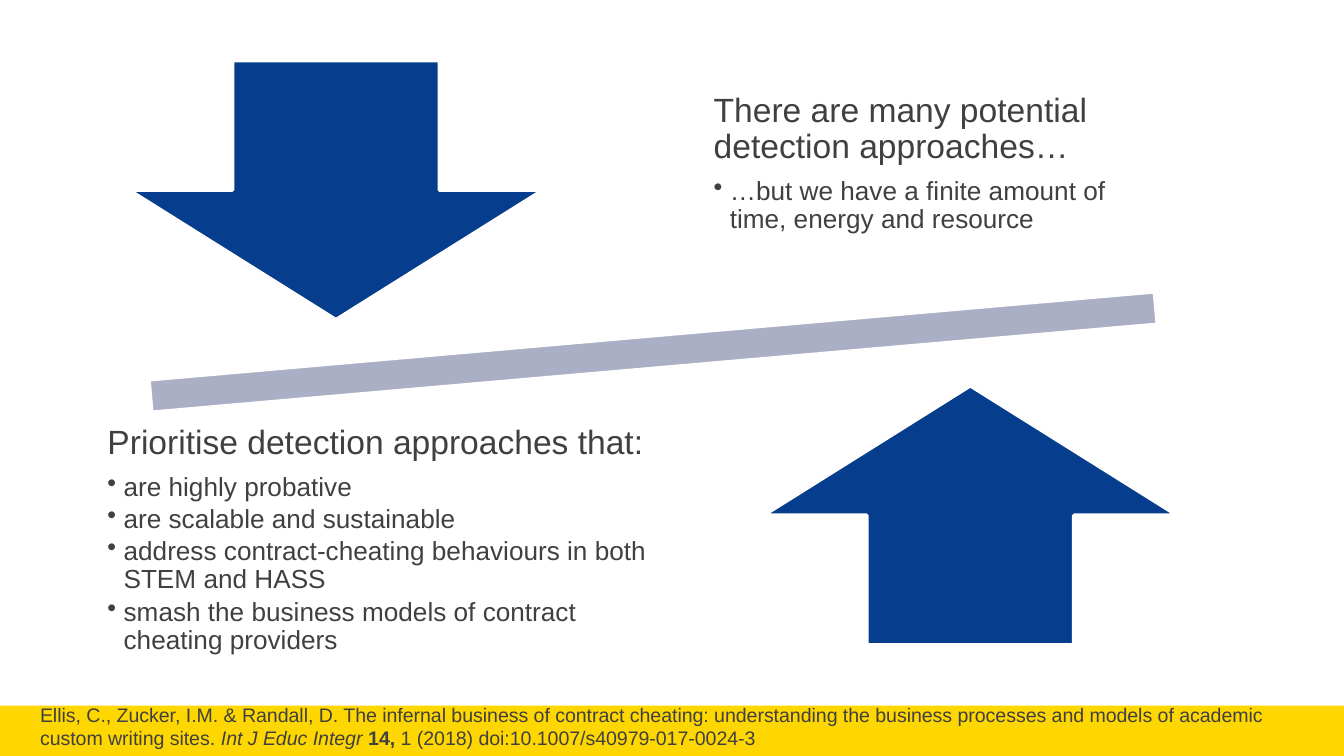
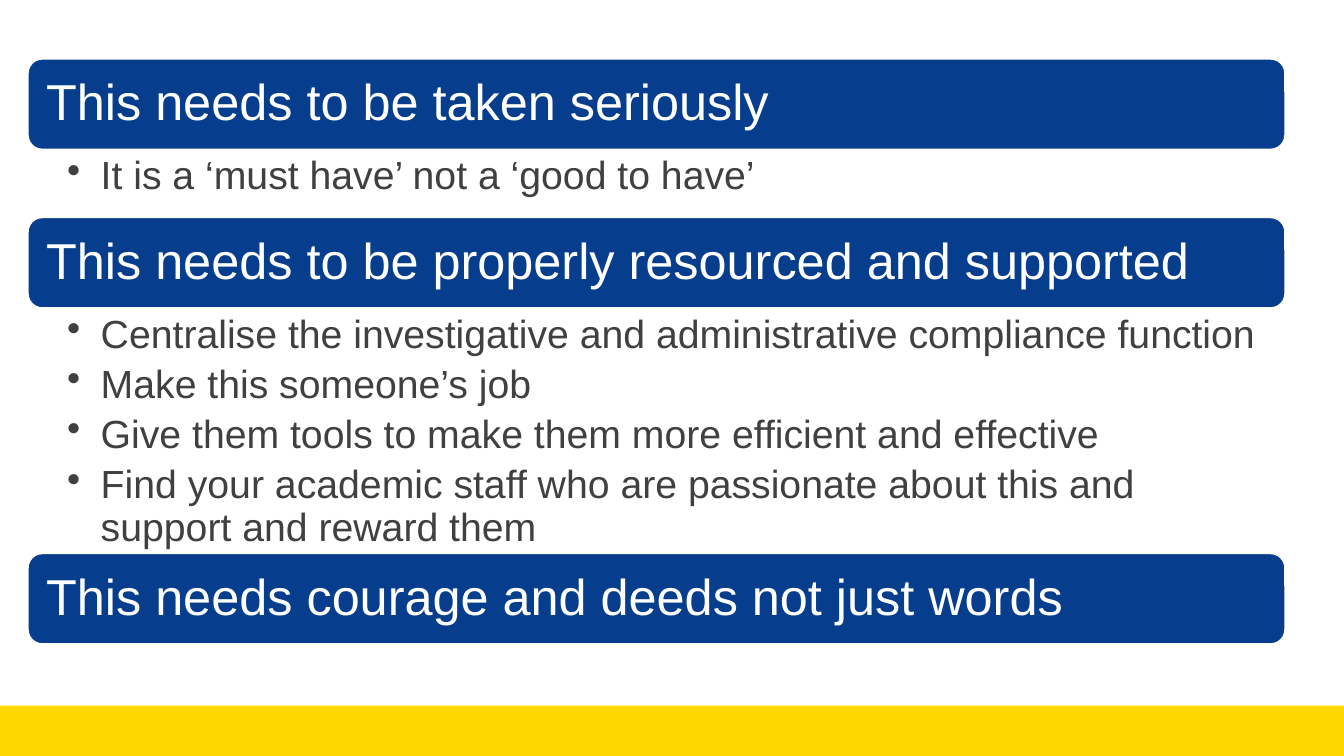
from dataclasses import dataclass
from typing import NamedTuple

from lxml.etree import SubElement
from pptx import Presentation
from pptx.dml.color import RGBColor
from pptx.enum.shapes import MSO_SHAPE as Preset
from pptx.enum.text import MSO_ANCHOR as Anchor, MSO_AUTO_SIZE as AutoSize, PP_ALIGN as Align
from pptx.oxml.ns import qn
from pptx.shapes.autoshape import Shape
from pptx.slide import Slide
from pptx.util import Inches, Pt

COLOURS = {"yellow": "FFD700", "blue": "063E8D", "bar": "ABAFC5",
           "text": "404040", "white": "FFFFFF"}
FONT = "Arial"
BLANK_LAYOUT = 6
WIDTH, HEIGHT = 10, 5.625


class Area(NamedTuple):
    left: float
    top: float
    width: float
    height: float


class Span(NamedTuple):
    text: str
    bold: bool = False
    italic: bool = False


@dataclass(frozen=True)
class Argument:
    """An arrow with the point that it weighs in."""
    arrow: Preset
    arrow_area: Area
    text_area: Area
    heading: str
    points: tuple[str, ...]


@dataclass(frozen=True)
class Section:
    """A heading bar with the bullets under it."""
    heading: str
    points: tuple[str, ...] = ()
    points_height: float = 0


ARGUMENTS = (
    Argument(Preset.DOWN_ARROW, Area(0.96, 0.45, 3.08, 1.93), Area(5.17, 0.21, 3.29, 2.02),
             "There are many potential detection approaches…",
             ("…but we have a finite amount of time, energy and resource",)),
    Argument(Preset.UP_ARROW, Area(5.68, 2.87, 3.08, 1.93), Area(0.66, 3.01, 4.5, 2.02),
             "Prioritise detection approaches that:",
             ("are highly probative",
              "are scalable and sustainable",
              "address contract-cheating behaviours in both STEM and HASS",
              "smash the business models of contract cheating providers")),
)

CITATION = (
    Span("Ellis, C., Zucker, I.M. & Randall, D. The infernal business of contract cheating: "
         "understanding the business processes and models of academic custom writing sites. "),
    Span("Int J Educ Integr ", italic=True),
    Span("14, ", bold=True),
    Span("1 (2018) doi:10.1007/s40979-017-0024-3"),
)

SECTIONS = (
    Section("This needs to be taken seriously",
            ("It is a ‘must have’ not a ‘good to have’",), 0.49),
    Section("This needs to be properly resourced and supported",
            ("Centralise the investigative and administrative compliance function",
             "Make this someone’s job",
             "Give them tools to make them more efficient and effective",
             "Find your academic staff who are passionate about this and support and reward them"),
            1.81),
    Section("This needs courage and deeds not just words"),
)


def colour(name: str) -> RGBColor:
    return RGBColor.from_string(COLOURS[name])


def lengths(area: Area) -> list[Inches]:
    return [Inches(value) for value in area]


def add_preset(slide: Slide, preset: Preset, area: Area, fill: str, outlined: bool = True) -> Shape:
    shape = slide.shapes.add_shape(preset, *lengths(area))
    shape.shadow.inherit = False
    shape.fill.solid()
    shape.fill.fore_color.rgb = colour(fill)
    if outlined:
        shape.line.color.rgb = colour("white")
        shape.line.width = Pt(2)
    else:
        shape.line.fill.background()
    return shape


def add_box(slide: Slide, area: Area) -> Shape:
    return slide.shapes.add_textbox(*lengths(area))


def set_frame(box: Shape, insets: tuple[float, float, float, float],
              anchor: Anchor = Anchor.MIDDLE) -> None:
    frame = box.text_frame
    frame.word_wrap = True
    frame.vertical_anchor = anchor
    (frame.margin_left, frame.margin_top,
     frame.margin_right, frame.margin_bottom) = map(Inches, insets)


def write(box: Shape, *spans: Span, size: float, ink: str = "text", after: float = 0,
          spacing: float = 0.9, bullet_indent: float = 0) -> None:
    """Write one paragraph, in the empty first one if there is no text yet."""
    frame = box.text_frame
    para = frame.add_paragraph() if frame.text else frame.paragraphs[0]
    para.alignment = Align.LEFT
    para.line_spacing = spacing
    para.space_after = Pt(after)
    if bullet_indent:
        para.level = 1
        properties = para._p.get_or_add_pPr()
        properties.set("marL", str(Inches(bullet_indent)))
        properties.set("indent", str(-Inches(bullet_indent)))
        SubElement(properties, qn("a:buChar")).set("char", "•")
    for span in spans:
        run = para.add_run()
        run.text = span.text
        run.font.name = FONT
        run.font.size = Pt(size)
        run.font.bold = span.bold
        run.font.italic = span.italic
        run.font.color.rgb = colour(ink)


def add_page(deck: Presentation) -> Slide:
    page = deck.slides.add_slide(deck.slide_layouts[BLANK_LAYOUT])
    add_preset(page, Preset.RECTANGLE, Area(0, 5.25, WIDTH, HEIGHT - 5.25), "yellow", outlined=False)
    return page


def add_argument(page: Slide, argument: Argument) -> None:
    add_preset(page, argument.arrow, argument.arrow_area, "blue")
    box = add_box(page, argument.text_area)
    set_frame(box, (0.14,) * 4)
    write(box, Span(argument.heading), size=18, after=6.3)
    for point in argument.points:
        write(box, Span(point), size=14, after=2.1, bullet_indent=0.12)


def build_balance(deck: Presentation) -> None:
    page = add_page(deck)
    bar = add_preset(page, Preset.MATH_MINUS, Area(-0.25, 2.1, 10.22, 1.04), "bar")
    bar.rotation = 355
    for argument in ARGUMENTS:
        add_argument(page, argument)
    # Source in the footer band
    box = add_box(page, Area(0.2, 5.18, 9.4, 0.45))
    set_frame(box, (0.1, 0.05, 0.1, 0.05), Anchor.TOP)
    box.text_frame.auto_size = AutoSize.SHAPE_TO_FIT_TEXT
    write(box, *CITATION, size=10.5, spacing=1.0)


def build_needs(deck: Presentation) -> None:
    page = add_page(deck)
    left, top, width, bar_height = 0.2, 0.43, 9.37, 0.69
    for section in SECTIONS:
        bar = add_preset(page, Preset.ROUNDED_RECTANGLE, Area(left, top, width, bar_height), "blue")
        set_frame(bar, (0.11,) * 4)
        write(bar, Span(section.heading), size=27, ink="white", after=9.5)
        top += bar_height
        if section.points:
            box = add_box(page, Area(left, top, width, section.points_height))
            set_frame(box, (0.3, 0.04, 0.21, 0.04), Anchor.TOP)
            for point in section.points:
                write(box, Span(point), size=21, after=4.2, bullet_indent=0.25)
        top += section.points_height


def main() -> None:
    deck = Presentation()
    deck.slide_width, deck.slide_height = Inches(WIDTH), Inches(HEIGHT)
    build_balance(deck)
    build_needs(deck)
    deck.save("out.pptx")


if __name__ == "__main__":
    main()
